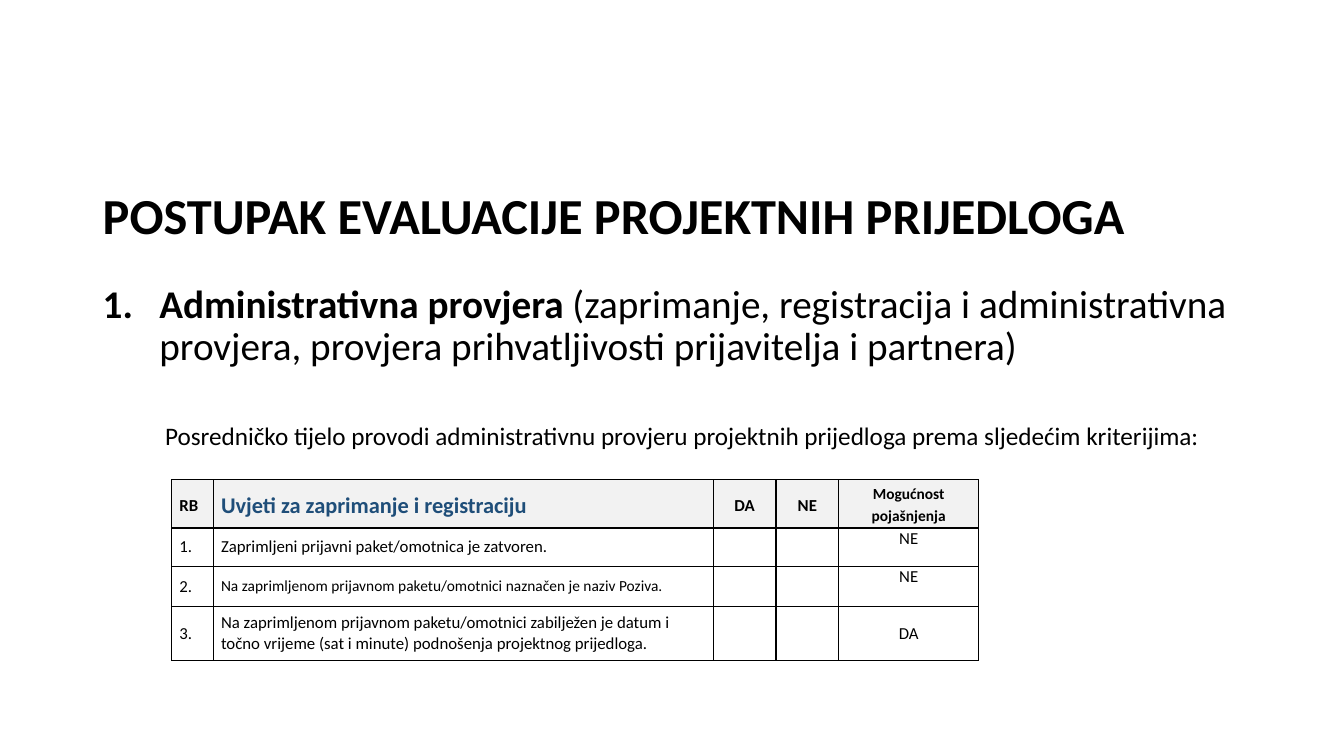
from lxml import etree
from pptx import Presentation
from pptx import util as u
from pptx.dml.color import RGBColor
from pptx.enum import text
from pptx.oxml import parse_xml

Pt = u.Pt
LEFT, CENTER, JUSTIFY = text.PP_ALIGN.LEFT, text.PP_ALIGN.CENTER, text.PP_ALIGN.JUSTIFY
MIDDLE, TOP = text.MSO_ANCHOR.MIDDLE, text.MSO_ANCHOR.TOP
NS = "http://schemas.openxmlformats.org/drawingml/2006/main"


def add_run(p, words, size, bold=False, color="000000"):
    r = p.add_run()
    r.text = words
    formats = {"name": "Calibri", "size": Pt(size), "bold": bold}
    for name, value in formats.items():
        setattr(r.font, name, value)
    r.font.color.rgb = RGBColor.from_string(color)


def set_bullet(p, tag, left, indent, **attrs):
    pPr = p._p.get_or_add_pPr()
    pPr.set("marL", str(Pt(left)))
    pPr.set("indent", str(Pt(indent)))
    etree.SubElement(pPr, f"{{{NS}}}{tag}", attrs)


prs = Presentation()
prs.slide_width, prs.slide_height = Pt(960), Pt(540)
s = prs.slides.add_slide(prs.slide_layouts[1])
title, body = s.placeholders

# Title and numbered point
for sp, top, height, anchor in ((title, 103.7, 104.4, MIDDLE), (body, 199.5, 299.5, TOP)):
    sp.left, sp.top, sp.width, sp.height = Pt(66.2), Pt(top), Pt(828), Pt(height)
    tf = sp.text_frame
    tf.auto_size = text.MSO_AUTO_SIZE.NONE
    tf.word_wrap = True
    tf.vertical_anchor = anchor

heading = title.text_frame.paragraphs[0]
add_run(heading, "POSTUPAK EVALUACIJE PROJEKTNIH PRIJEDLOGA", 36, True)

point = body.text_frame.paragraphs[0]
set_bullet(point, "buAutoNum", 40.5, -40.5, type="arabicPeriod")
add_run(point, "Administrativna provjera ", 28, True)
add_run(point, "(zaprimanje, registracija i administrativna provjera, "
        "provjera prihvatljivosti prijavitelja i partnera)", 28)

intro = body.text_frame.add_paragraph()
set_bullet(intro, "buNone", 44.5, 0)
add_run(intro, "Posredničko tijelo provodi administrativnu provjeru projektnih prijedloga "
        "prema sljedećim kriterijima:", 18)

for p, before in ((heading, 0), (point, 0), (intro, 38.8)):
    p.alignment = LEFT
    p.line_spacing = 0.9
    p.space_before = Pt(before)

# Criteria table
rows = [
    ["RB", "Uvjeti za zaprimanje i registraciju", "DA", "NE", "Mogućnost pojašnjenja"],
    ["1.", "Zaprimljeni prijavni paket/omotnica je zatvoren.", "", "", "NE"],
    ["2.", "Na zaprimljenom prijavnom paketu/omotnici naznačen je naziv Poziva.", "", "", "NE"],
    ["3.", "Na zaprimljenom prijavnom paketu/omotnici zabilježen je datum i točno vrijeme "
     "(sat i minute) podnošenja projektnog prijedloga.", "", "", "DA"],
]
widths = [29.8, 357, 44.8, 44.8, 100]
heights = [34.5, 27.4, 28.5, 38.6]
sizes = {(0, 1): 16, (0, 4): 11, (2, 1): 11}
colors = {(0, 1): "1F4E79"}
raised = {(1, 4), (2, 4)}

frame = s.shapes.add_table(len(rows), len(widths), Pt(122.7), Pt(342.7),
                           Pt(sum(widths)), Pt(sum(heights)))
table = frame.table
table.first_row = table.horz_banding = False
for column, width in zip(table.columns, widths):
    column.width = Pt(width)

for i, (row, height) in enumerate(zip(rows, heights)):
    table.rows[i].height = Pt(height)
    for j, words in enumerate(row):
        cell = table.cell(i, j)
        cell.margin_left = cell.margin_right = Pt(5.4)
        cell.margin_top = cell.margin_bottom = 0
        cell.vertical_anchor = TOP if (i, j) in raised else MIDDLE
        if i == 0:
            cell.fill.solid()
            cell.fill.fore_color.rgb = RGBColor.from_string("F2F2F2")
        else:
            cell.fill.background()
        for k, side in enumerate("LRTB"):
            cell._tc.tcPr.insert(k, parse_xml(
                f'<a:ln{side} xmlns:a="{NS}" w="{Pt(1)}"><a:solidFill>'
                f'<a:srgbClr val="000000"/></a:solidFill></a:ln{side}>'))
        if words:
            p = cell.text_frame.paragraphs[0]
            p.alignment = CENTER if j > 1 else JUSTIFY if i == 0 else LEFT
            p.line_spacing = 1.15 if i == 0 else 1.0
            add_run(p, words, sizes.get((i, j), 12), i == 0, colors.get((i, j), "000000"))

prs.save("out.pptx")
